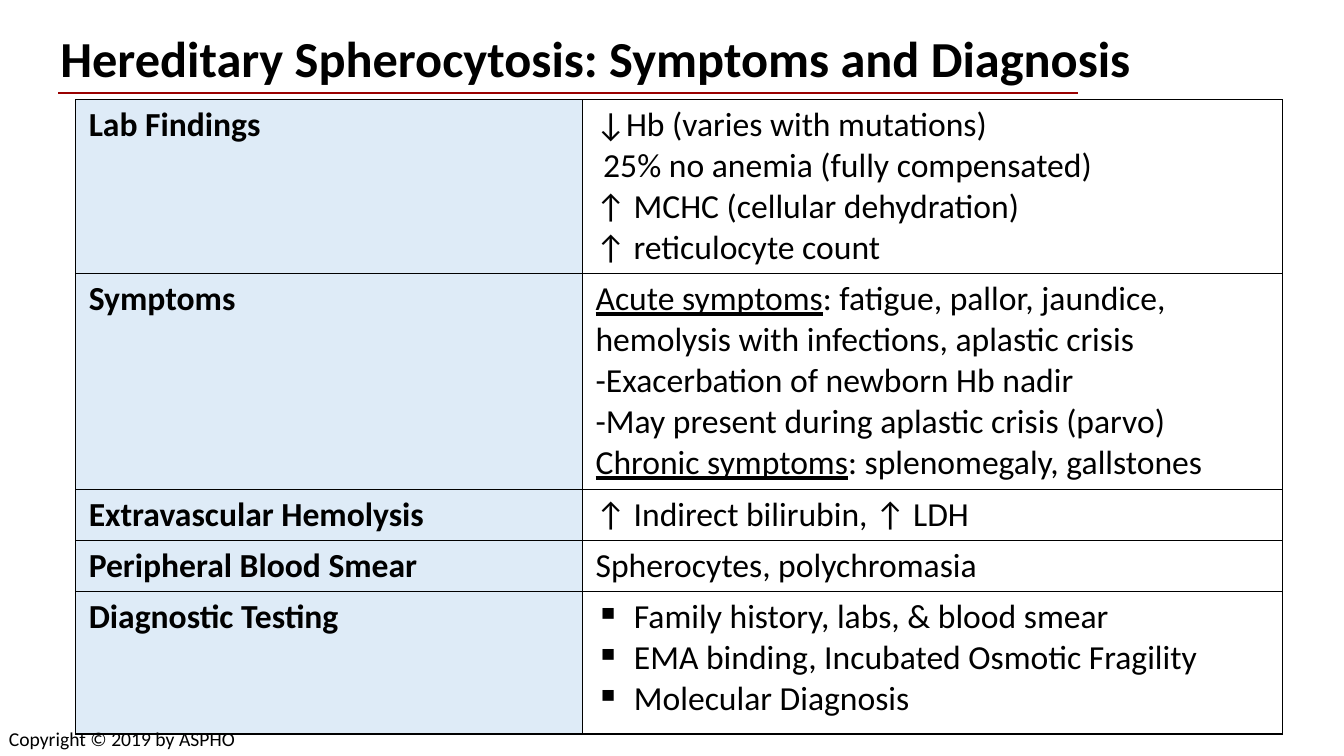
from lxml.etree import SubElement
from pptx import Presentation
from pptx.dml.color import RGBColor
from pptx.enum.shapes import MSO_CONNECTOR
from pptx.enum.text import MSO_ANCHOR
from pptx.oxml.ns import qn
from pptx.util import Inches, Pt

COLORS = {"ink": "000000", "rule": "990000", "label": "DEEBF7"}
SLIDE_WIDTH, SLIDE_HEIGHT = Inches(13.33), Inches(7.5)
COLUMN, ROW = SLIDE_WIDTH / 100, SLIDE_HEIGHT / 100
LABEL_SHARE = 0.42
BULLET_INDENT = Inches(0.38)
CELL_MARGINS = {
    "margin_left": Inches(0.13),
    "margin_right": Inches(0.13),
    "margin_top": Inches(0.05),
    "margin_bottom": Inches(0.05),
}

FINDINGS = [
    ("Lab Findings", 23, False, [
        ["↓Hb (varies with mutations)"],
        [" 25% no anemia (fully compensated)"],
        ["↑ MCHC (cellular dehydration)"],
        ["↑ reticulocyte count"],
    ]),
    ("Symptoms", 28.5, False, [
        ["Acute symptoms", ": fatigue, pallor, jaundice, hemolysis with infections, aplastic crisis"],
        ["-Exacerbation of newborn Hb nadir"],
        ["-May present during aplastic crisis (parvo)"],
        ["Chronic symptoms", ": splenomegaly, gallstones"],
    ]),
    ("Extravascular Hemolysis", 6.8, False, [["↑ Indirect bilirubin, ↑ LDH"]]),
    ("Peripheral Blood Smear", 6.8, False, [["Spherocytes, polychromasia"]]),
    ("Diagnostic Testing", 18.8, True, [
        ["Family history, labs, & blood smear"],
        ["EMA binding, Incubated Osmotic Fragility"],
        ["Molecular Diagnosis"],
    ]),
]


def color(name):
    return RGBColor.from_string(COLORS[name])


def apply(target, values):
    for attribute, value in values.items():
        setattr(target, attribute, value)


def on_grid(left, top, width, height):
    return [round(n) for n in (left * COLUMN, top * ROW, width * COLUMN, height * ROW)]


def add_run(paragraph, words, size, bold=False, underline=False):
    run = paragraph.add_run()
    run.text = words
    apply(run.font, {"name": "Calibri", "size": Pt(size), "bold": bold, "underline": underline})
    run.font.color.rgb = color("ink")


def add_bullet(paragraph):
    properties = paragraph._p.get_or_add_pPr()
    properties.set("marL", str(BULLET_INDENT))
    properties.set("indent", str(-BULLET_INDENT))
    SubElement(properties, qn("a:buChar"), char="▪")


def add_borders(cell):
    properties = cell._tc.get_or_add_tcPr()
    for side in ("lnL", "lnR", "lnT", "lnB"):
        border = SubElement(properties, qn(f"a:{side}"), w=str(Pt(1)))
        fill = SubElement(border, qn("a:solidFill"))
        SubElement(fill, qn("a:srgbClr"), val=COLORS["ink"])


def fill_cell(cell, lines, bold=False, bulleted=False):
    apply(cell, CELL_MARGINS)
    add_borders(cell)
    if bold:
        cell.fill.solid()
        cell.fill.fore_color.rgb = color("label")
    else:
        cell.fill.background()
    frame = cell.text_frame
    for index, line in enumerate(lines):
        paragraph = frame.add_paragraph() if index else frame.paragraphs[0]
        if bulleted:
            add_bullet(paragraph)
        for position, words in enumerate(line):
            add_run(paragraph, words, 24, bold, len(line) > 1 and position == 0)


def add_caption(slide, box, words, size, bold=False, wrap=True, spacing=1.0):
    frame = slide.shapes.add_textbox(*on_grid(*box)).text_frame
    apply(frame, {"word_wrap": wrap, "vertical_anchor": MSO_ANCHOR.MIDDLE})
    paragraph = frame.paragraphs[0]
    paragraph.line_spacing = spacing
    add_run(paragraph, words, size, bold)


def add_heading(slide, box):
    left, top, width, height = box
    rule_left, rule_top, rule_width, _ = on_grid(left + 0.6, top + height + 0.14, 75.85, 0)
    rule = slide.shapes.add_connector(
        MSO_CONNECTOR.STRAIGHT, rule_left, rule_top, rule_left + rule_width, rule_top
    )
    rule.line.color.rgb = color("rule")
    rule.line.width = Pt(1.5)
    SubElement(rule._element.spPr, qn("a:effectLst"))
    add_caption(slide, box, "Hereditary Spherocytosis: Symptoms and Diagnosis", 36, True, spacing=0.9)


def add_findings(slide, box):
    left, top, width, height = on_grid(*box)
    table = slide.shapes.add_table(len(FINDINGS), 2, left, top, width, height).table
    apply(table, {"first_row": False, "horz_banding": False})
    for column, share in zip(table.columns, (LABEL_SHARE, 1 - LABEL_SHARE)):
        column.width = round(width * share)
    for index, (label, rows, bulleted, lines) in enumerate(FINDINGS):
        table.rows[index].height = round(rows * ROW)
        fill_cell(table.cell(index, 0), [[label]], bold=True)
        fill_cell(table.cell(index, 1), lines, bulleted=bulleted)


def main():
    deck = Presentation()
    apply(deck, {"slide_width": SLIDE_WIDTH, "slide_height": SLIDE_HEIGHT})
    slide = deck.slides.add_slide(deck.slide_layouts[6])
    add_heading(slide, (3.75, 4.13, 87.9, 8))
    add_findings(slide, (5.63, 13.2, 89.8, 83.9))
    add_caption(slide, (-0.08, 95.47, 18.6, 4.53), "Copyright © 2019 by ASPHO", 14, wrap=False)
    deck.save("out.pptx")


if __name__ == "__main__":
    main()
